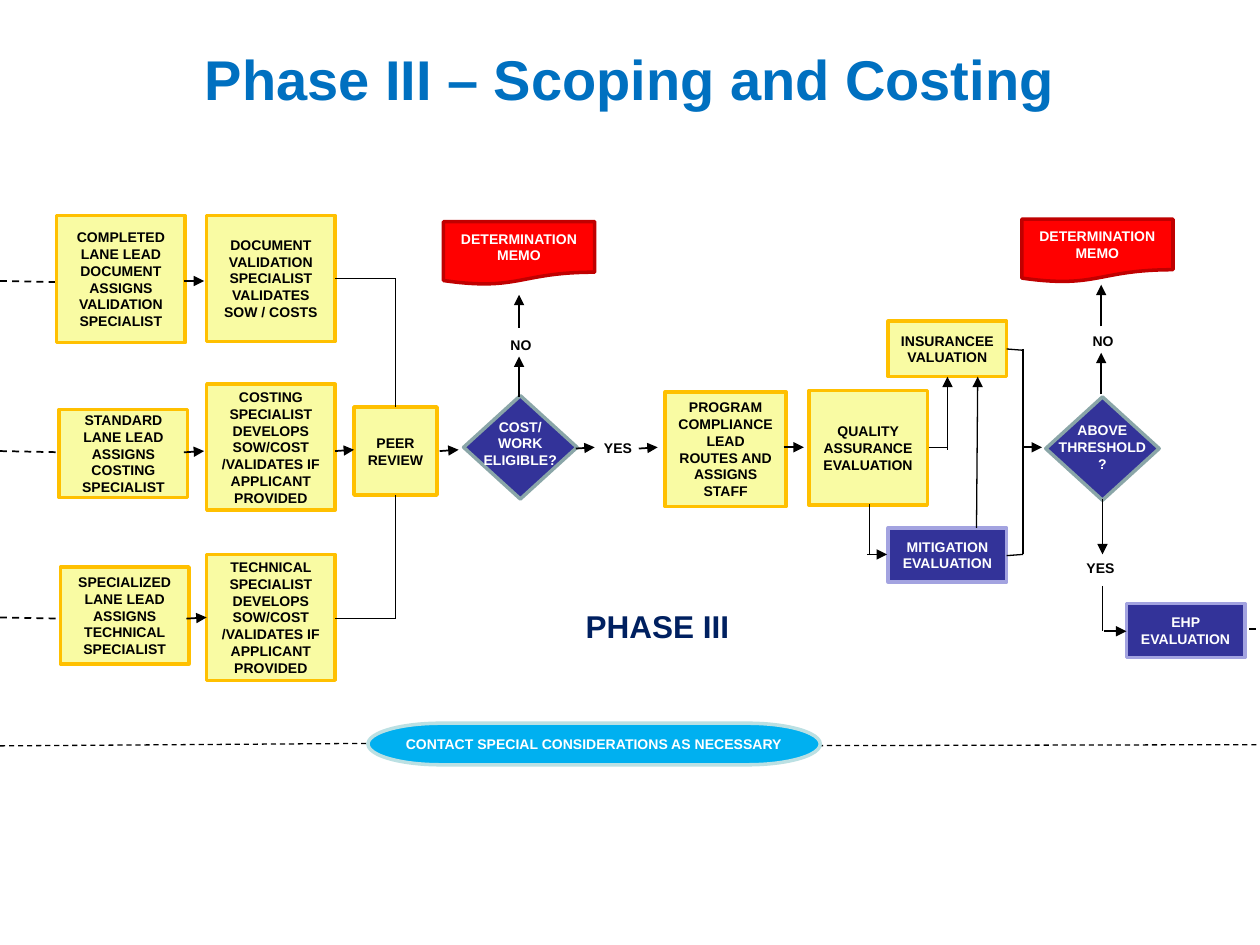
"""Build the Phase III scoping and costing flowchart slide."""
from pptx import Presentation
from pptx.dml.color import RGBColor
from pptx.enum.dml import MSO_LINE
from pptx.enum.shapes import MSO_CONNECTOR, MSO_SHAPE
from pptx.enum.text import MSO_ANCHOR, PP_ALIGN
from pptx.oxml.ns import qn
from pptx.util import Cm, Pt
from lxml.etree import SubElement

INCH = 2.54
BLACK = RGBColor(0x00, 0x00, 0x00)
WHITE = RGBColor(0xFF, 0xFF, 0xFF)
TITLE_BLUE = RGBColor(0x00, 0x70, 0xC0)
NAVY = RGBColor(0x00, 0x20, 0x60)
YELLOW = RGBColor(0xF9, 0xFB, 0xA3)
GOLD = RGBColor(0xFF, 0xC0, 0x00)
RED = RGBColor(0xFF, 0x00, 0x00)
DARK_RED = RGBColor(0xC0, 0x00, 0x00)
INDIGO = RGBColor(0x33, 0x33, 0x99)
LAVENDER = RGBColor(0xA3, 0xA3, 0xE0)
GREY_TEAL = RGBColor(0x8A, 0xA6, 0xA8)
SKY = RGBColor(0x00, 0xB0, 0xF0)
PALE_TEAL = RGBColor(0xBB, 0xE0, 0xE3)


def write_text(box, text, size, colour, anchor, align=PP_ALIGN.CENTER):
    frame = box.text_frame
    frame.text = text
    frame.word_wrap = True
    frame.vertical_anchor = anchor
    for paragraph in frame.paragraphs:
        paragraph.alignment = align
        for span in paragraph.runs:
            span.font.name = "Arial"
            span.font.size = Pt(size)
            span.font.bold = True
            span.font.color.rgb = colour


def draw_line(ends, width, dashed=False, arrow=False):
    lengths = [Cm(INCH * value) for value in ends]
    connector = page.shapes.add_connector(MSO_CONNECTOR.STRAIGHT, *lengths)
    connector.line.color.rgb = BLACK
    connector.line.width = Pt(width)
    if dashed:
        connector.line.dash_style = MSO_LINE.DASH
    if arrow:
        SubElement(connector.line._get_or_add_ln(), qn("a:tailEnd"), type="triangle")
    SubElement(connector._element.spPr, qn("a:effectLst"))


deck = Presentation()
deck.slide_width = Cm(10 * INCH)
deck.slide_height = Cm(7.5 * INCH)
page = deck.slides.add_slide(deck.slide_layouts[5])

title = page.shapes.title
title.left, title.top = Cm(0.5 * INCH), Cm(0.3 * INCH)
title.width, title.height = Cm(9 * INCH), Cm(1.25 * INCH)
write_text(title, "Phase III – Scoping and Costing", 32, TITLE_BLUE, MSO_ANCHOR.TOP)

for ends, width in [
    ((0, 2.23, 0.5, 2.24), 1),
    ((0, 3.58, 0.5, 3.59), 1),
    ((0, 4.9, 0.5, 4.91), 1),
    ((9.53, 4.99, 10, 4.99), 1),
    ((0, 5.92, 2.92, 5.9), 0.75),
    ((5.56, 5.92, 10, 5.91), 0.75),
]:
    draw_line(ends, width, dashed=True)

task = (MSO_SHAPE.RECTANGLE, YELLOW, GOLD, BLACK)
special_task = (MSO_SHAPE.RECTANGLE, INDIGO, LAVENDER, WHITE)
memo = (MSO_SHAPE.FLOWCHART_DOCUMENT, RED, DARK_RED, WHITE)
decision = (MSO_SHAPE.DIAMOND, INDIGO, GREY_TEAL, WHITE)
notice = (MSO_SHAPE.FLOWCHART_TERMINATOR, SKY, PALE_TEAL, WHITE)

for (preset, fill, outline, colour), left, top, width, height, text in [
    (task, 0.45, 1.71, 1.02, 1.01, "COMPLETED LANE LEAD DOCUMENT ASSIGNS VALIDATION SPECIALIST"),
    (task, 0.47, 3.25, 1.02, 0.7, "STANDARD LANE LEAD ASSIGNS COSTING SPECIALIST"),
    (task, 0.48, 4.5, 1.02, 0.77, "SPECIALIZED LANE LEAD ASSIGNS TECHNICAL SPECIALIST"),
    (task, 1.64, 1.71, 1.02, 1, "DOCUMENT VALIDATION SPECIALIST VALIDATES SOW / COSTS"),
    (task, 1.64, 3.05, 1.02, 1,
     "COSTING SPECIALIST DEVELOPS SOW/COST /VALIDATES IF APPLICANT PROVIDED"),
    (task, 1.64, 4.4, 1.02, 1,
     "TECHNICAL SPECIALIST DEVELOPS SOW/COST /VALIDATES IF APPLICANT PROVIDED"),
    (task, 2.81, 3.23, 0.66, 0.7, "PEER REVIEW"),
    (decision, 3.68, 3.14, 0.9, 0.82, ""),
    (memo, 3.52, 1.76, 1.2, 0.5, "DETERMINATION MEMO"),
    (task, 5.28, 3.11, 0.96, 0.91, "PROGRAM COMPLIANCE LEAD ROUTES AND ASSIGNS STAFF"),
    (task, 6.42, 3.1, 0.94, 0.91, "QUALITY ASSURANCE EVALUATION"),
    (task, 7.05, 2.55, 0.94, 0.44, "INSURANCEEVALUATION"),
    (special_task, 7.05, 4.19, 0.94, 0.43, "MITIGATION EVALUATION"),
    (decision, 8.3, 3.15, 0.9, 0.82, ""),
    (memo, 8.11, 1.74, 1.2, 0.5, "DETERMINATION MEMO"),
    (special_task, 8.94, 4.79, 0.94, 0.43, "EHP EVALUATION"),
    (notice, 2.92, 5.74, 3.59, 0.33, "CONTACT SPECIAL CONSIDERATIONS AS NECESSARY"),
]:
    lengths = [Cm(INCH * value) for value in (left, top, width, height)]
    box = page.shapes.add_shape(preset, *lengths)
    box.shadow.inherit = False
    box.fill.solid()
    box.fill.fore_color.rgb = fill
    box.line.color.rgb = outline
    box.line.width = Pt(2)
    if text:
        write_text(box, text, 8, colour, MSO_ANCHOR.MIDDLE)

for left, top, width, height, text, size, colour, align in [
    (3.68, 3.27, 0.9, 0.5, "COST/ WORK\nELIGIBLE?", 8, WHITE, PP_ALIGN.CENTER),
    (8.3, 3.3, 0.9, 0.5, "ABOVE THRESHOLD?", 8, WHITE, PP_ALIGN.CENTER),
    (3.82, 2.62, 0.63, 0.24, "NO", 8, BLACK, PP_ALIGN.CENTER),
    (8.44, 2.59, 0.63, 0.24, "NO", 8, BLACK, PP_ALIGN.CENTER),
    (4.69, 3.44, 0.43, 0.24, "YES", 8, BLACK, PP_ALIGN.CENTER),
    (8.52, 4.39, 0.43, 0.24, "YES", 8, BLACK, PP_ALIGN.CENTER),
    (4.55, 4.77, 2.89, 0.4, "PHASE III", 18, NAVY, PP_ALIGN.LEFT),
]:
    lengths = [Cm(INCH * value) for value in (left, top, width, height)]
    label = page.shapes.add_textbox(*lengths)
    write_text(label, text, size, colour, MSO_ANCHOR.TOP, align)

for ends in [
    (2.66, 2.21, 3.14, 2.21),
    (3.14, 2.21, 3.14, 3.23),
    (2.66, 4.91, 3.14, 4.91),
    (3.14, 4.91, 3.14, 3.93),
    (6.9, 4, 6.9, 4.4),
    (7.37, 3.55, 7.52, 3.55),
    (8.12, 2.77, 8.12, 4.4),
    (8.12, 2.78, 7.99, 2.77),
    (7.99, 4.41, 8.12, 4.4),
    (8.75, 4.65, 8.75, 5.01),
]:
    draw_line(ends, 0.75)

for ends, width in [
    ((1.46, 2.23, 1.62, 2.23), 1),
    ((1.46, 3.59, 1.62, 3.58), 1),
    ((1.48, 4.91, 1.64, 4.9), 1),
    ((2.66, 3.58, 2.81, 3.57), 1),
    ((3.49, 3.58, 3.64, 3.57), 1),
    ((4.12, 3.15, 4.12, 2.83), 1),
    ((4.12, 2.6, 4.12, 2.34), 1),
    ((4.57, 3.56, 4.72, 3.55), 1),
    ((5.07, 3.56, 5.22, 3.55), 1),
    ((6.22, 3.55, 6.38, 3.55), 1),
    ((6.88, 4.4, 7.04, 4.4), 1),
    ((7.52, 3.57, 7.52, 2.99), 0.75),
    ((7.75, 4.19, 7.76, 2.99), 0.75),
    ((8.12, 3.55, 8.27, 3.55), 1),
    ((8.74, 3.13, 8.74, 2.8), 1),
    ((8.74, 2.59, 8.74, 2.26), 1),
    ((8.75, 3.96, 8.75, 4.4), 1),
    ((8.76, 5.01, 8.94, 5.01), 1),
]:
    draw_line(ends, width, arrow=True)

deck.save("out.pptx")
